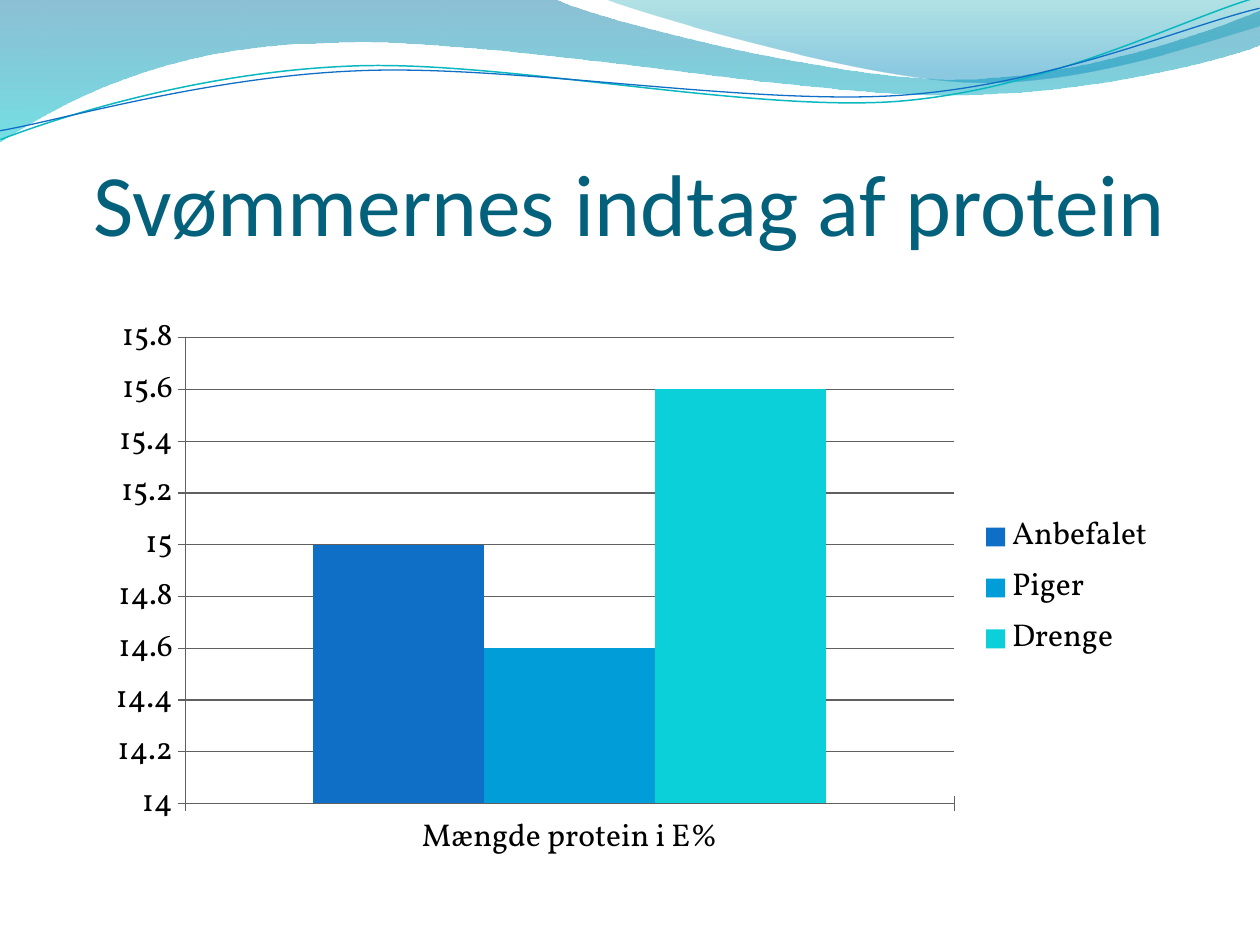
"""Build a slide with a wave header, a title and a protein intake column chart."""
import pptx
import pptx.chart.data
import pptx.dml.color
import pptx.enum.chart
import pptx.enum.text
import pptx.oxml
import pptx.oxml.ns
import pptx.util

RGB = pptx.dml.color.RGBColor
TITLE_COLOR = RGB(0x04, 0x61, 0x7B)
BLACK = RGB(0x00, 0x00, 0x00)
AXIS_GRAY = RGB(0x60, 0x60, 0x60)
BLUE = RGB(0x0F, 0x6F, 0xC6)
SKY = RGB(0x00, 0x9D, 0xD9)
TURQUOISE = RGB(0x0B, 0xD0, 0xD9)
TEAL_LINE = RGB(0x0A, 0xB8, 0xBF)
DEEP_BLUE = RGB(0x00, 0x74, 0xA1)
CYAN = RGB(0x00, 0xC6, 0xCF)
DEEP_TEAL = RGB(0x00, 0xA1, 0xA9)
MID_BLUE = RGB(0x00, 0x8B, 0xBF)

PX = 914400 / 126
WAVE_ROTATION = 357.3

TITLE = "Svømmernes indtag af protein"
TITLE_BOX = (63, 97, 1134, 157)
CHART_BOX = (94, 304, 1074, 568)
CATEGORIES = ["Mængde protein i E%"]
SERIES = [("Anbefalet", 15, BLUE), ("Piger", 14.6, SKY), ("Drenge", 15.6, TURQUOISE)]

BANDS = [
    ([(0, 0), (554, -1),
      (600, 21, 837, 79, 955, 79), (1075, 79, 1207, 33, 1260, 11), (1261, 45),
      (1238, 55, 1096, 96, 940, 95), (784, 94, 481, 35, 324, 43),
      (163, 45, 58, 105, -1, 142), (0, 0)],
     [(0, DEEP_BLUE, 45), (1, CYAN, 55)]),
    ([(604, -1), (641, 14, 859, 78, 969, 82), (1079, 87, 1211, 40, 1260, 26),
      (1260, 0), (604, -1)],
     [(0, DEEP_TEAL, 30), (0.8, MID_BLUE, 45)]),
]
WAVES = [
    ([(-2, 110), (58, 90, 199, 52, 350, 53), (499, 53, 745, 118, 896, 114),
      (1048, 109, 1184, 45, 1260, 27)], TEAL_LINE, 0.85),
    ([(-2, 101), (57, 94, 207, 57, 357, 58), (509, 58, 750, 112, 902, 108),
      (1052, 104, 1187, 52, 1262, 38)], BLUE, 0.75),
]


def emu(values):
    return [round(v * PX) for v in values]


def add_outline(shapes, segments, close):
    points = [emu(seg[i:i + 2]) for seg in segments for i in range(0, len(seg), 2)]
    builder = shapes.build_freeform(*points[0], scale=1.0)
    builder.add_line_segments(points[1:], close=close)
    sp = builder.convert_to_shape()
    sp.shadow.inherit = False
    lines = iter(sp._element.findall(".//" + pptx.oxml.ns.qn("a:lnTo")))
    for seg in segments[1:]:
        group = [next(lines) for _ in range(len(seg) // 2)]
        if len(group) == 3:
            curve = pptx.oxml.parse_xml(f'<a:cubicBezTo {pptx.oxml.ns.nsdecls("a")}/>')
            group[0].addprevious(curve)
            for line in group:
                curve.append(line[0])
                line.getparent().remove(line)
    return sp


def add_band(shapes, segments, stops):
    sp = add_outline(shapes, segments, True)
    sp.line.fill.background()
    sp.fill.gradient()
    sp.fill.gradient_angle = 270
    for stop, (position, color, opacity) in zip(sp.fill.gradient_stops, stops):
        stop.position = position
        stop.color.rgb = color
    colors = sp._element.spPr.findall(".//" + pptx.oxml.ns.qn("a:srgbClr"))
    for node, (position, color, opacity) in zip(colors, stops):
        alpha = pptx.oxml.parse_xml(f'<a:alpha {pptx.oxml.ns.nsdecls("a")} val="{opacity * 1000}"/>')
        node.append(alpha)


def add_wave(shapes, segments, color, width):
    sp = add_outline(shapes, segments, False)
    sp.rotation = WAVE_ROTATION
    sp.fill.background()
    sp.line.color.rgb = color
    sp.line.width = pptx.util.Pt(width)


def add_title(s):
    tf = s.shapes.add_textbox(*emu(TITLE_BOX)).text_frame
    tf.word_wrap = True
    tf.vertical_anchor = pptx.enum.text.MSO_ANCHOR.BOTTOM
    tf.margin_left = tf.margin_right = tf.margin_bottom = 0
    tf.text = TITLE
    p = tf.paragraphs[0]
    p.alignment = pptx.enum.text.PP_ALIGN.CENTER
    font = p.runs[0].font
    font.name, font.size = "Calibri", pptx.util.Pt(50)
    font.color.rgb = TITLE_COLOR


def add_protein_chart(s):
    data = pptx.chart.data.CategoryChartData()
    data.categories = CATEGORIES
    for name, value, color in SERIES:
        data.add_series(name, [value])
    kind = pptx.enum.chart.XL_CHART_TYPE.COLUMN_CLUSTERED
    chart = s.shapes.add_chart(kind, *emu(CHART_BOX), data).chart
    chart.has_title = False
    chart.font.name, chart.font.size = "Vollkorn", pptx.util.Pt(18)
    chart.font.color.rgb = BLACK
    chart.has_legend = True
    chart.legend.position = pptx.enum.chart.XL_LEGEND_POSITION.RIGHT
    chart.legend.include_in_layout = False

    plot = chart.plots[0]
    plot.gap_width, plot.overlap, plot.vary_by_categories = 150, 0, False
    for series, (name, value, color) in zip(plot.series, SERIES):
        series.format.fill.solid()
        series.format.fill.fore_color.rgb = color

    axis = chart.value_axis
    axis.has_major_gridlines = True
    axis.tick_labels.number_format = "General"
    axis.tick_labels.number_format_is_linked = False
    for part in (axis, chart.category_axis):
        part.major_tick_mark = pptx.enum.chart.XL_TICK_MARK.CROSS
    for part in (axis, axis.major_gridlines, chart.category_axis):
        part.format.line.color.rgb = AXIS_GRAY
        part.format.line.width = pptx.util.Pt(0.75)


def main():
    prs = pptx.Presentation()
    prs.slide_width, prs.slide_height = emu((1260, 945))
    s = prs.slides.add_slide(prs.slide_layouts[6])
    for segments, stops in BANDS:
        add_band(s.shapes, segments, stops)
    waves = s.shapes.add_group_shape()
    for segments, color, width in WAVES:
        add_wave(waves.shapes, segments, color, width)
    add_title(s)
    add_protein_chart(s)
    prs.save("out.pptx")


if __name__ == "__main__":
    main()
